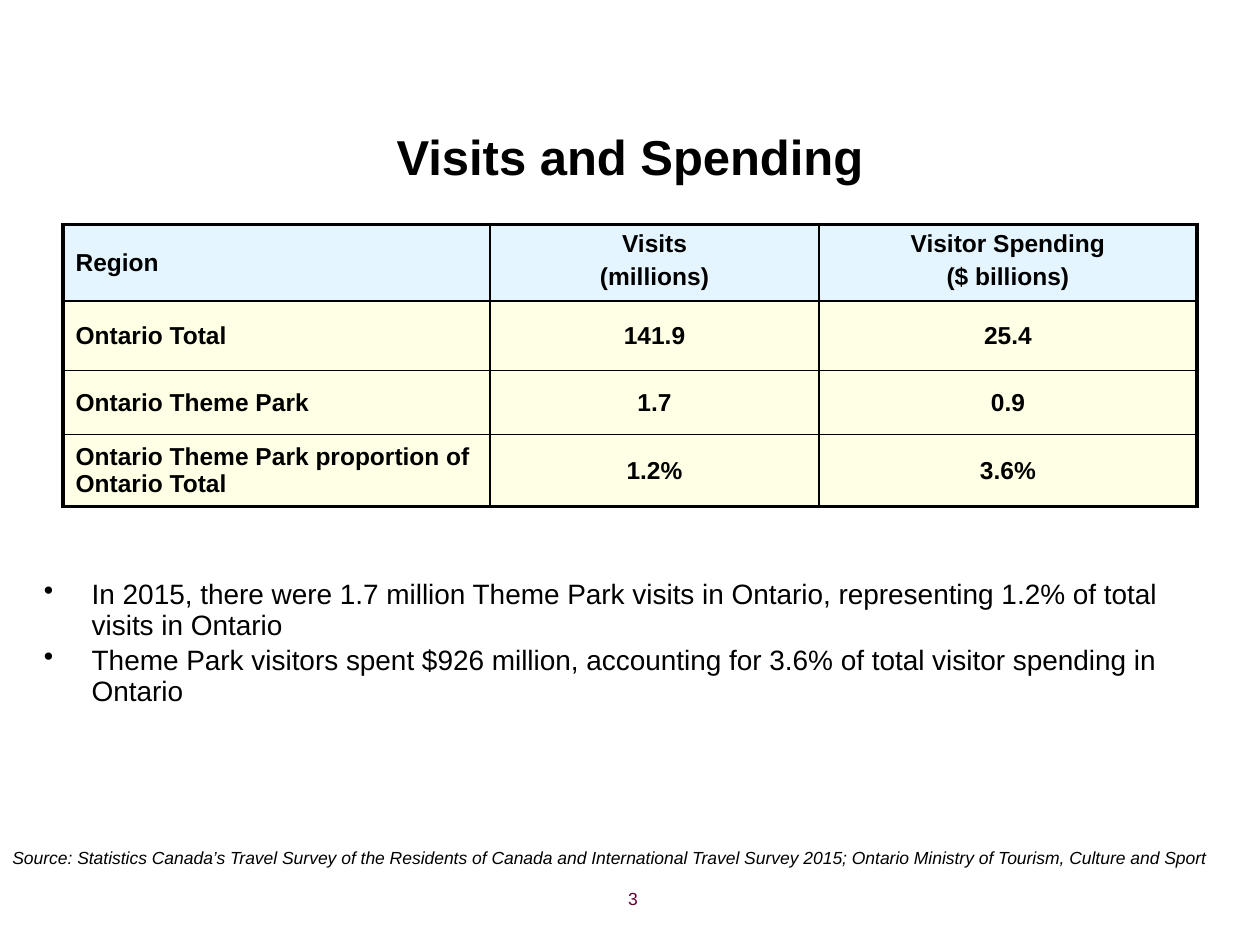
from lxml.etree import SubElement
from pptx import Presentation
from pptx.dml.color import RGBColor
from pptx.enum.text import MSO_ANCHOR as Anchor, PP_ALIGN as Align
from pptx.oxml import parse_xml
from pptx.oxml.ns import nsdecls, qn
from pptx.util import Inches, Pt

BLACK = "000000"
HEAD = ["Region", "Visits\n(millions)", "Visitor Spending\n($ billions)"]
ROWS = [
    ["Ontario Total", "141.9", "25.4"],
    ["Ontario Theme Park", "1.7", "0.9"],
    ["Ontario Theme Park proportion of Ontario Total", "1.2%", "3.6%"],
]
POINTS = [
    "In 2015, there were 1.7 million Theme Park visits in Ontario, "
    "representing 1.2% of total visits in Ontario",
    "Theme Park visitors spent $926 million, accounting for 3.6% of total "
    "visitor spending in Ontario",
]
SOURCE = (
    "Source: Statistics Canada’s Travel Survey of the Residents of Canada and "
    "International Travel Survey 2015; Ontario Ministry of Tourism, Culture and Sport"
)


def color(code):
    return RGBColor.from_string(code)


def write(frame, text, size, hue=BLACK, align=Align.LEFT, bold=False,
          italic=False, bullet=False):
    frame.word_wrap = True
    frame.text = text
    for i, para in enumerate(frame.paragraphs):
        para.alignment = align
        if i:
            para.space_before = Pt(size * 0.2)
        if bullet:
            para.line_spacing = 0.9
            props = para._p.get_or_add_pPr()
            props.set("marL", str(Inches(0.38)))
            props.set("indent", str(-Inches(0.38)))
            SubElement(props, qn("a:buChar"), char="•")
        font = para.font
        font.name, font.size = "Arial", Pt(size)
        font.bold, font.italic = bold, italic
        font.color.rgb = color(hue)


def add_text(slide, box, text, size, anchor=Anchor.TOP, **style):
    frame = slide.shapes.add_textbox(*map(Inches, box)).text_frame
    frame.vertical_anchor = anchor
    write(frame, text, size, **style)


def paint(cell, hue):
    cell.fill.solid()
    cell.fill.fore_color.rgb = color(hue)
    tint = cell._tc.tcPr.find(".//" + qn("a:srgbClr"))
    SubElement(tint, qn("a:alpha"), val="50000")


def add_edges(cell, outer):
    for i, side in enumerate("LRTB"):
        width = Pt(2.25 if side in outer else 1)
        cell._tc.tcPr.insert(i, parse_xml(
            f'<a:ln{side} {nsdecls("a")} w="{width}"><a:solidFill>'
            f'<a:srgbClr val="{BLACK}"/></a:solidFill></a:ln{side}>'))


def add_grid(slide, box, cols, highs):
    data = [HEAD] + ROWS
    table = slide.shapes.add_table(
        len(data), len(cols), *map(Inches, box)).table
    table.first_row = table.horz_banding = False
    for col, width in zip(table.columns, cols):
        col.width = Inches(width)
    for row, high in zip(table.rows, highs):
        row.height = Inches(high)
    for r, line in enumerate(data):
        for c, text in enumerate(line):
            cell = table.cell(r, c)
            value = r > 0 and c > 0
            cell.margin_left = cell.margin_right = Inches(0 if value else 0.1)
            cell.margin_top = cell.margin_bottom = Inches(0 if value else 0.05)
            top = r == 0 and c > 0
            cell.vertical_anchor = Anchor.TOP if top else Anchor.MIDDLE
            write(cell.text_frame, text, 14, bold=True,
                  align=Align.CENTER if c else Align.LEFT)
            paint(cell, "FFFFCC" if r else "CCECFF")
            ends = {"L": c == 0, "R": c == len(cols) - 1,
                    "T": r == 0, "B": r == len(data) - 1}
            add_edges(cell, [side for side in ends if ends[side]])


def main():
    deck = Presentation()
    deck.slide_width, deck.slide_height = Inches(10), Inches(7.5)
    slide = deck.slides.add_slide(deck.slide_layouts[6])
    add_text(slide, (0.5, 0.86, 9, 0.75), "Visits and Spending", 28,
             anchor=Anchor.MIDDLE, align=Align.CENTER, bold=True)
    add_text(slide, (0.25, 4.56, 9.5, 1.85), "\n".join(POINTS), 16, bullet=True)
    add_grid(slide, (0.5, 1.78, 9, 2.24), (3.39, 2.61, 3),
             (0.61, 0.55, 0.51, 0.57))
    add_text(slide, (2.83, 7, 2.33, 0.35), "3", 10, hue="660033",
             align=Align.RIGHT)
    add_text(slide, (0, 6.67, 9.8, 0.27), SOURCE, 10, italic=True)
    deck.save("out.pptx")


if __name__ == "__main__":
    main()
